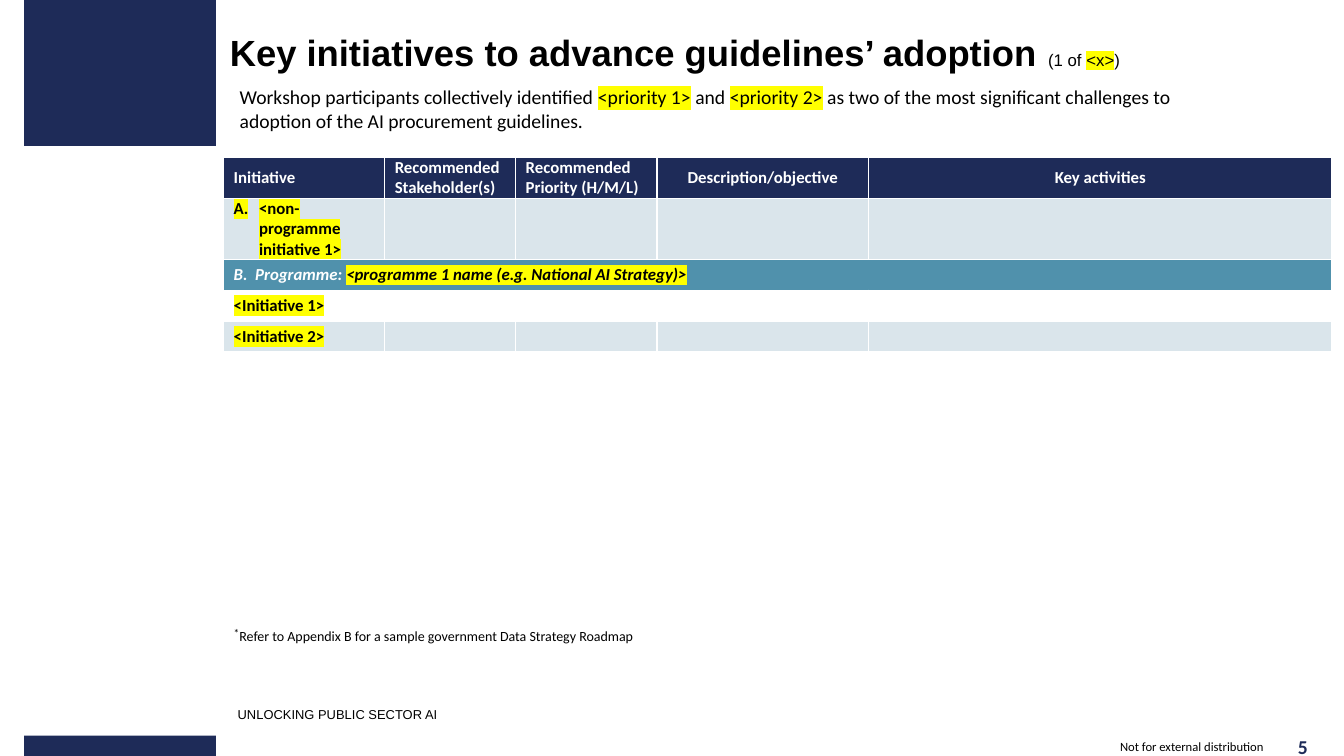
from lxml.etree import SubElement
from pptx import Presentation
from pptx.dml.color import RGBColor
from pptx.enum.shapes import MSO_SHAPE
from pptx.enum.text import MSO_ANCHOR, MSO_AUTO_SIZE, PP_ALIGN
from pptx.oxml import parse_xml
from pptx.oxml.ns import nsdecls, qn
from pptx.util import Cm, Pt

NAVY, TEAL, PALE = "1E2B58", "5091AC", "DAE5EB"
WHITE, BLACK, GLOW = "FFFFFF", "000000", "FFFF00"
MARK = {"glow": GLOW}
TOP, MID = MSO_ANCHOR.TOP, MSO_ANCHOR.MIDDLE
LEFT, MIDDLE = PP_ALIGN.LEFT, PP_ALIGN.CENTER


def paint(item, tone):
    if hasattr(item, "solid"):
        item.solid()
        item = item.fore_color
    item.rgb = RGBColor.from_string(tone)


def apply(item, values):
    for name, value in values.items():
        setattr(item, name, value)


class Deck:
    base = {"name": "Calibri", "size": 12, "bold": False, "italic": False, "tone": BLACK}

    def __init__(self):
        self.show = Presentation()
        apply(self.show, {"slide_width": Cm(33.87), "slide_height": Cm(19.05)})
        self.slide = self.show.slides.add_slide(self.show.slide_layouts[1])

    def place(self, shape, box):
        apply(shape, dict(zip(("left", "top", "width", "height"), map(Cm, box))))

    def block(self, *box):
        shape = self.slide.shapes.add_shape(MSO_SHAPE.RECTANGLE, *map(Cm, box))
        shape.shadow.inherit = False
        paint(shape.fill, NAVY)
        shape.line.fill.background()

    def span(self, para, text, look):
        look = self.base | look
        run = para.add_run()
        run.text = text
        apply(run.font, {key: look[key] for key in ("name", "bold", "italic")})
        run.font.size = Pt(look["size"])
        paint(run.font.fill, look["tone"])
        props = run._r.get_or_add_rPr()
        if "glow" in look:
            glow = parse_xml(f'<a:highlight {nsdecls("a")}><a:srgbClr val="{look["glow"]}"/></a:highlight>')
            props.find(qn("a:solidFill")).addnext(glow)
        if "rise" in look:
            props.set("baseline", str(look["rise"] * 1000))

    def fill(self, frame, paras, look, align=LEFT, inset=0, hang=0, mark="buNone", gap=0, lead=1.0):
        for num, runs in enumerate(paras):
            para = frame.add_paragraph() if num else frame.paragraphs[0]
            props = para._p.get_or_add_pPr()
            props.set("marL", str(Cm(inset)))
            props.set("indent", str(Cm(-hang)))
            SubElement(props, qn("a:" + mark), {"type": "alphaUcPeriod"} if hang else {})
            apply(para, {"alignment": align, "space_before": Pt(0),
                         "space_after": Pt(gap), "line_spacing": lead})
            for text, extra in runs:
                self.span(para, text, look | extra)

    def text(self, box, runs, look, shape=None, pads=(0.25, 0.13, 0.25, 0.13), anchor=TOP, **form):
        shape = shape or self.slide.shapes.add_textbox(0, 0, 0, 0)
        self.place(shape, box)
        frame = shape.text_frame
        names = ("margin_left", "margin_top", "margin_right", "margin_bottom")
        apply(frame, dict(zip(names, map(Cm, pads))))
        apply(frame, {"word_wrap": True, "auto_size": MSO_AUTO_SIZE.NONE, "vertical_anchor": anchor})
        self.fill(frame, [runs], look, **form)

    def edge(self, cell):
        props = cell._tc.get_or_add_tcPr()
        for num, side in enumerate("LRTB"):
            line = parse_xml(f'<a:ln{side} {nsdecls("a")} w="12700"><a:solidFill>'
                             f'<a:srgbClr val="{WHITE}"/></a:solidFill></a:ln{side}>')
            props.insert(num, line)

    def table(self, box, wides, highs, tones, words):
        grid = self.slide.shapes.add_table(len(highs), len(wides), *map(Cm, box)).table
        for col, wide in zip(grid.columns, wides):
            col.width = Cm(wide)
        for num, (row, high, tone) in enumerate(zip(grid.rows, highs, tones)):
            row.height = Cm(high)
            for spot, cell in enumerate(row.cells):
                wide_head = num == 0 and spot > 2
                pad = Cm(0 if wide_head else 0.25)
                apply(cell, {"margin_left": pad, "margin_right": pad, "margin_top": 0,
                             "margin_bottom": 0, "vertical_anchor": MID})
                paint(cell.fill, tone)
                self.edge(cell)
                if (num, spot) in words:
                    paras, form = words[num, spot]
                    look = {"bold": True, "tone": BLACK if num else WHITE}
                    align = MIDDLE if wide_head else LEFT
                    self.fill(cell.text_frame, paras, look, align, **form)
        return grid


def main():
    deck = Deck()
    title, body = deck.slide.placeholders
    for top, high in ((0, 3.68), (18.54, 0.51)):
        deck.block(0.61, top, 4.83, high)

    small = {"size": 12, "bold": False}
    deck.text((5.79, 0.76, 22.83, 2.34),
              [("Key initiatives to advance guidelines’ adoption ", {}),
               ("(1 of ", small), ("<x>", small | MARK), (")", small)],
              {"name": "Arial", "size": 26, "bold": True}, title, (0, 0, 0.25, 0))
    note = (0, 0.13, 0, 0.25)
    deck.text((5.79, 2.01, 24.46, 1.68),
              [("Workshop participants collectively identified ", {}), ("<priority 1>", MARK),
               (" and ", {}), ("<priority 2>", MARK),
               (" as two of the most significant challenges to adoption of the AI procurement guidelines.", {})],
              {"size": 14}, body, note, inset=0.25, gap=2)

    heads = ("Initiative", "Recommended Stakeholder(s)", "Recommended\nPriority (H/M/L)",
             "Description/objective", "Key activities")
    words = {(0, num): ([[(line, {})] for line in head.split("\n")], {})
             for num, head in enumerate(heads)}
    words[1, 0] = [[("<non-programme initiative 1>", MARK)]], {"inset": 0.64, "hang": 0.64, "mark": "buAutoNum"}
    words[2, 0] = [[("B.  Programme: ", {"tone": WHITE, "italic": True}),
                    ("<programme 1 name (e.g. National AI Strategy)>", MARK | {"italic": True})]], {}
    for num in (1, 2):
        words[num + 2, 0] = [[(f"<Initiative {num}>", MARK)]], {}
    grid = deck.table((5.64, 3.96, 27.94, 4.9), (4.06, 3.3, 3.56, 5.33, 11.68),
                      (1.03, 1.55, 0.77, 0.77, 0.77), (NAVY, PALE, TEAL, WHITE, PALE), words)
    grid.cell(2, 0).merge(grid.cell(2, 4))

    deck.text((5.64, 15.54, 10.97, 0.66),
              [("*", {"size": 14, "rise": 22}),
               ("Refer to Appendix B for a sample government Data Strategy Roadmap", {})],
              {"size": 10}, pads=note, inset=0.25, gap=1)
    deck.text((5.74, 17.75, 6.96, 0.56), [("UNLOCKING PUBLIC SECTOR AI", {})],
              {"name": "Arial", "size": 9.2}, lead=0.8)
    deck.text((32.44, 18.44, 0.79, 0.76), [("5", {})], {"size": 14, "bold": True, "tone": NAVY},
              pads=(0, 0, 0, 0), anchor=MID, align=MIDDLE)
    deck.text((27.89, 18.64, 4.29, 0.36), [("Not for external distribution", {})], {"size": 9},
              anchor=MID, align=MIDDLE)
    deck.show.save("out.pptx")


if __name__ == "__main__":
    main()
